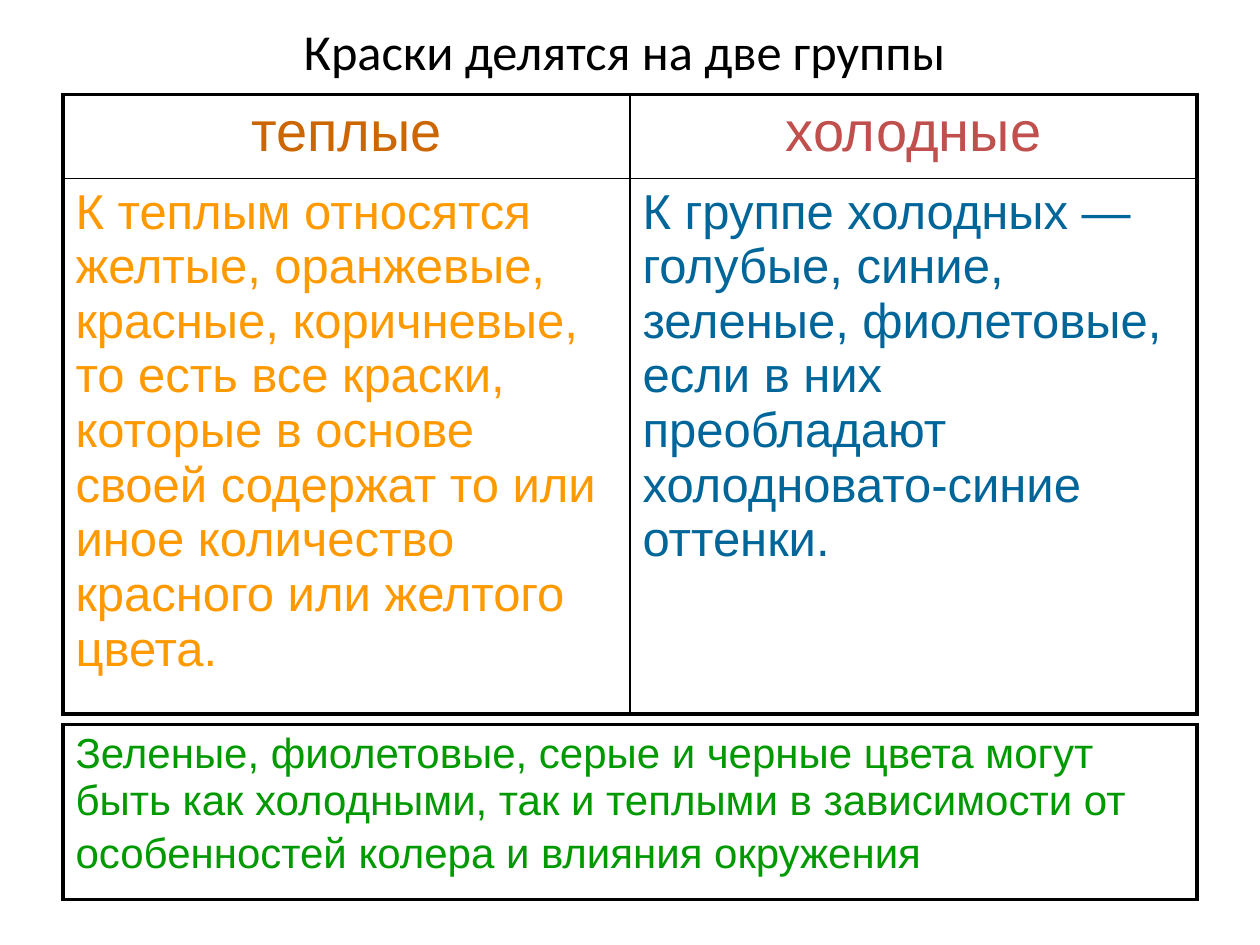
"""Build a slide that compares warm and cold paint colours."""
from lxml.etree import SubElement as Sub
from pptx import Presentation
from pptx.dml.color import RGBColor as RGB
from pptx.enum.text import MSO_ANCHOR as ANCHOR, MSO_AUTO_SIZE as AUTO, PP_ALIGN as ALIGN
from pptx.oxml.ns import qn
from pptx.util import Pt

COLORS = {
    "black": "000000",
    "brown": "CC6600",
    "red": "C0504D",
    "orange": "FF9900",
    "blue": "006699",
    "green": "009900",
}
LEFT, WIDTH = 36, 648
OUTER, INNER = 2.25, 1

GROUPS = [
    [[("теплые", 32, "brown")], [("холодные", 32, "red")]],
    [
        [("К теплым относятся желтые, оранжевые, красные, коричневые, "
          "то есть все краски, которые в основе своей содержат то или иное "
          "количество красного или желтого цвета.", 28, "orange")],
        [("К группе холодных — голубые, синие, зеленые, фиолетовые, "
          "если в них преобладают холодновато-синие оттенки.", 28, "blue")],
    ],
]
NOTE = [[[
    ("Зеленые, фиолетовые, серые и черные цвета могут быть как холодными, "
     "так и теплыми в зависимости от особенностей колера и влияния окружения", 24, "green"),
    (" ", 28, "black"),
]]]


def add_run(p, text, size, color, font="Arial"):
    r = p.add_run()
    r.text = text
    r.font.name = font
    r.font.size = Pt(size)
    r.font.color.rgb = RGB.from_string(COLORS[color])


def set_border(cell, side, width):
    tc_pr = cell._tc.get_or_add_tcPr()
    ln = Sub(tc_pr, qn(f"a:ln{side}"), w=str(Pt(width)))
    fill = Sub(ln, qn("a:solidFill"))
    Sub(fill, qn("a:srgbClr"), val=COLORS["black"])


def add_title(s, text):
    sp = s.shapes.title
    sp.left, sp.top, sp.width, sp.height = Pt(30), Pt(21.6), Pt(654), Pt(44.6)
    tf = sp.text_frame
    tf.auto_size = AUTO.NONE
    tf.vertical_anchor = ANCHOR.MIDDLE
    tf.margin_top, tf.margin_bottom = Pt(0), Pt(30)
    p = tf.paragraphs[0]
    p.alignment = ALIGN.CENTER
    add_run(p, text, 28.8, "black", "Calibri")


def add_text_table(s, top, heights, rows, header=False):
    n_rows, n_cols = len(rows), len(rows[0])
    frame = s.shapes.add_table(n_rows, n_cols, Pt(LEFT), Pt(top), Pt(WIDTH), Pt(sum(heights)))
    table = frame.table
    table.first_row = header
    table.horz_banding = False
    for i, row in enumerate(rows):
        table.rows[i].height = Pt(heights[i])
        for j, runs in enumerate(row):
            cell = table.cell(i, j)
            edges = {"L": j == 0, "R": j == n_cols - 1, "T": i == 0, "B": i == n_rows - 1}
            for side, is_outer in edges.items():
                set_border(cell, side, OUTER if is_outer else INNER)
            cell.fill.background()
            p = cell.text_frame.paragraphs[0]
            p.alignment = ALIGN.CENTER if header and i == 0 else ALIGN.LEFT
            p.font.bold = False
            for text, size, color in runs:
                add_run(p, text, size, color)
                p.runs[-1].font.bold = False


def main():
    prs = Presentation()
    prs.slide_width, prs.slide_height = Pt(720), Pt(540)
    s = prs.slides.add_slide(prs.slide_layouts[5])
    add_title(s, "Краски делятся на две группы")
    add_text_table(s, 54, [48, 306], GROUPS, header=True)
    add_text_table(s, 414, [100], NOTE)
    prs.save("out.pptx")


if __name__ == "__main__":
    main()
